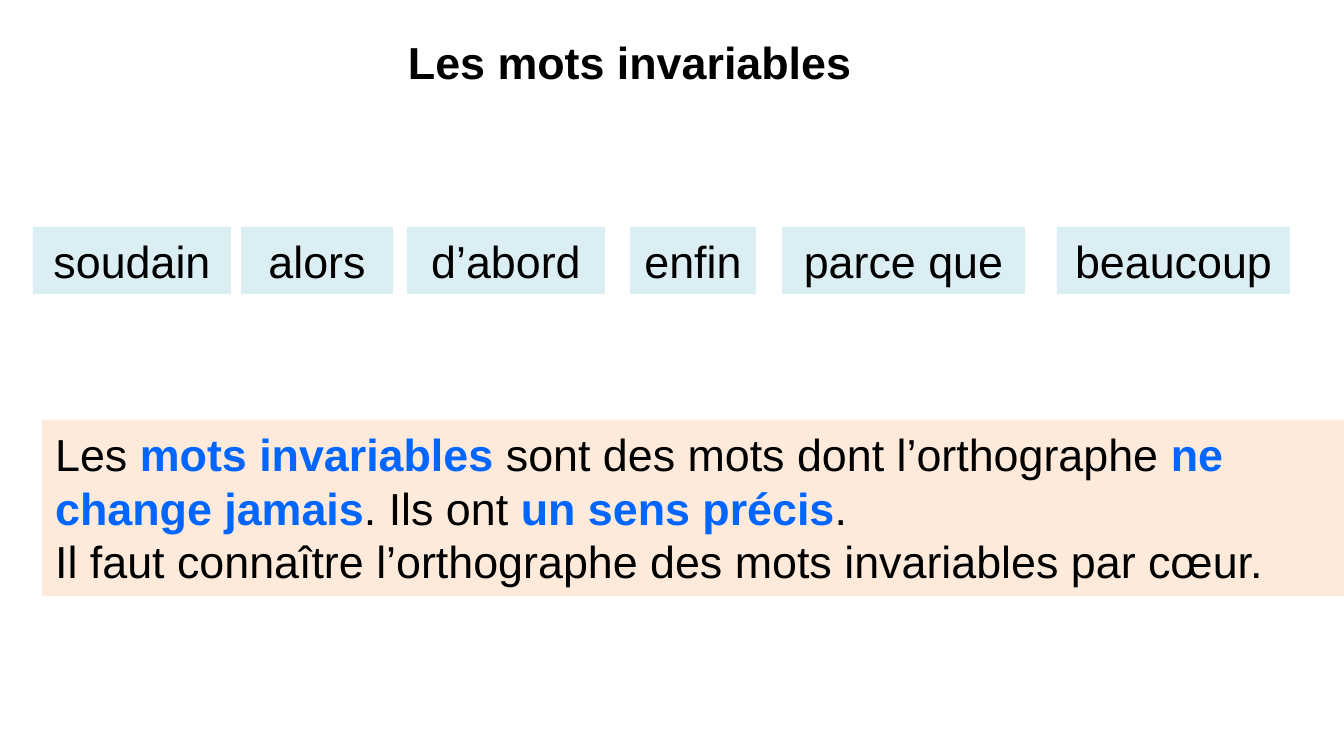
from pptx import Presentation
from pptx.dml.color import RGBColor
from pptx.enum.shapes import MSO_SHAPE
from pptx.enum.text import MSO_ANCHOR, MSO_AUTO_SIZE, PP_ALIGN
from pptx.util import Emu, Pt

COLORS = {"text": "000000", "key": "0066FF", "word": "DBEEF4", "rule": "FDEADA"}
FONT, SIZE = "Arial", Pt(24)
SLIDE_W, SLIDE_H = 1344, 756
LINE_H = 67
WORD_TOP = 227

TITLE = "Les mots invariables"
# word, left, width
WORDS = [
    ("soudain", 33, 198),
    ("alors", 241, 152),
    ("d’abord", 407, 198),
    ("enfin", 630, 126),
    ("parce que", 782, 243),
    ("beaucoup", 1057, 233),
]
# paragraphs of (text, is key phrase)
RULE = [
    [("Les ", False), ("mots invariables ", True),
     ("sont des mots dont l’orthographe ", False), ("ne change jamais", True),
     (". Ils ont ", False), ("un sens précis", True), (".", False)],
    [("Il faut connaître l’orthographe des mots invariables par cœur.", False)],
]


def px(n):
    return Emu(round(n * 914400 / 134.4))


def style(run, color="text", bold=False):
    run.font.name, run.font.size, run.font.bold = FONT, SIZE, bold
    run.font.color.rgb = RGBColor.from_string(COLORS[color])


def prepare(frame):
    frame.word_wrap = True
    frame.auto_size = MSO_AUTO_SIZE.SHAPE_TO_FIT_TEXT
    frame.vertical_anchor = MSO_ANCHOR.TOP
    return frame


def add_panel(slide, box, fill):
    """Add a borderless filled rectangle and return its text frame."""
    panel = slide.shapes.add_shape(MSO_SHAPE.RECTANGLE, *map(px, box))
    panel.shadow.inherit = False
    panel.fill.solid()
    panel.fill.fore_color.rgb = RGBColor.from_string(COLORS[fill])
    panel.line.fill.background()
    return prepare(panel.text_frame)


def write_centered(frame, text, bold=False):
    paragraph = frame.paragraphs[0]
    paragraph.text = text
    paragraph.alignment = PP_ALIGN.CENTER
    style(paragraph.runs[0], bold=bold)


def main():
    prs = Presentation()
    prs.slide_width, prs.slide_height = px(SLIDE_W), px(SLIDE_H)
    slide = prs.slides.add_slide(prs.slide_layouts[6])

    title = slide.shapes.add_textbox(*map(px, (153, 28, 953, LINE_H)))
    write_centered(prepare(title.text_frame), TITLE, bold=True)

    for word, left, width in WORDS:
        write_centered(add_panel(slide, (left, WORD_TOP, width, LINE_H), "word"), word)

    rule_left = 42
    rule = add_panel(slide, (rule_left, 420, SLIDE_W - rule_left, 176), "rule")
    for i, phrases in enumerate(RULE):
        paragraph = rule.add_paragraph() if i else rule.paragraphs[0]
        paragraph.alignment = PP_ALIGN.LEFT
        for text, is_key in phrases:
            run = paragraph.add_run()
            run.text = text
            style(run, "key" if is_key else "text", is_key)

    prs.save("out.pptx")


if __name__ == "__main__":
    main()
